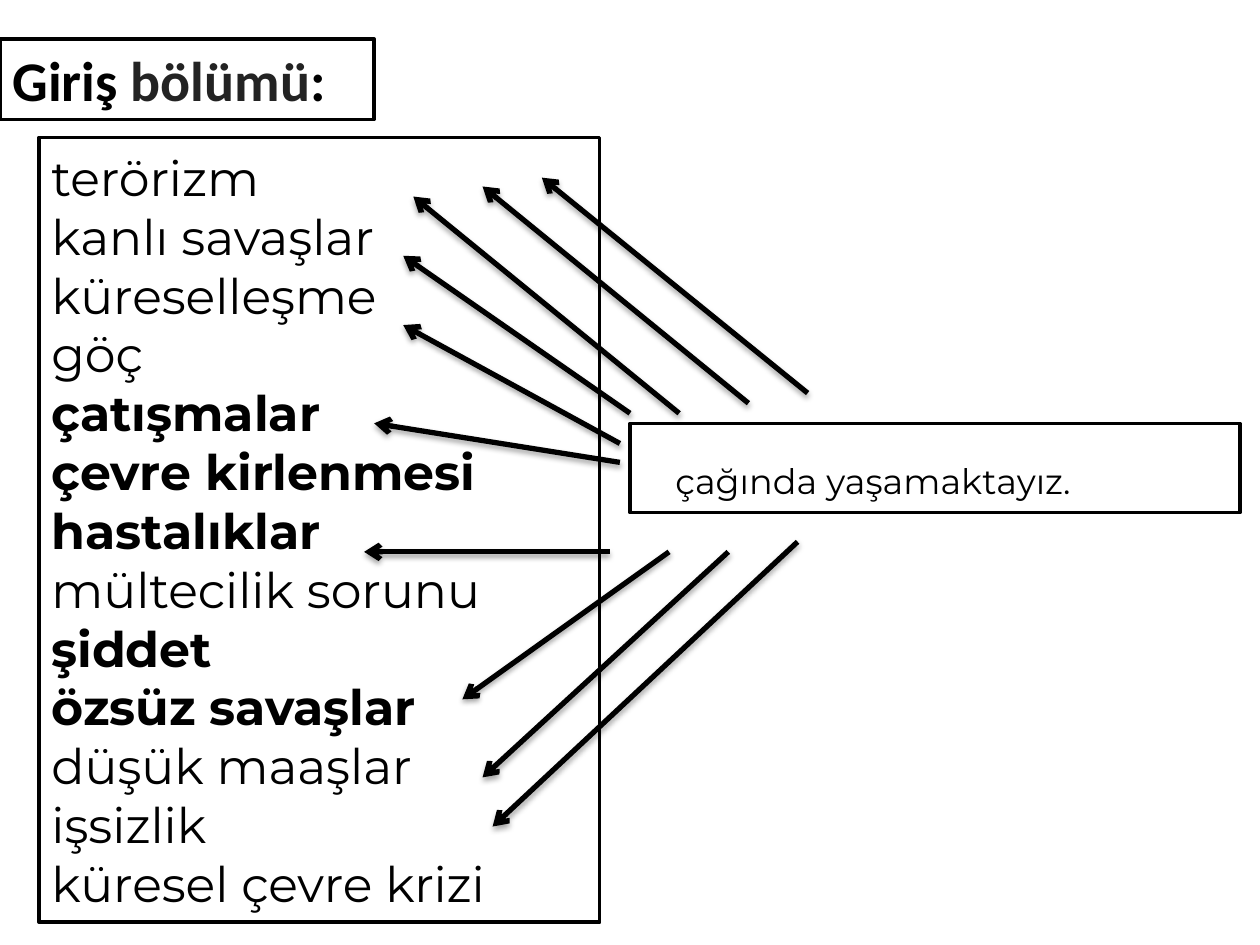
import pptx
import pptx.util
import pptx.dml.color
import pptx.enum.shapes
import pptx.enum.text
import pptx.oxml
import pptx.oxml.ns

W, H = 10, 7.5
COLORS = {"ink": "000000", "grey": "232323", "paper": "FFFFFF"}

# Content: (text, font, size, bold, colour) for each run
TITLE = [[("Giriş ", "Calibri", 32, True, "ink"),
          ("bölümü", "Calibri", 32, True, "grey"),
          (":", "Calibri", 32, True, "ink")]]
PROBLEMS = ["terörizm", "kanlı savaşlar", "küreselleşme", "göç", "çatışmalar",
            "çevre kirlenmesi", "hastalıklar", "mültecilik sorunu", "şiddet",
            "özsüz savaşlar", "düşük maaşlar", "işsizlik", "küresel çevre krizi"]
STRESSED = {"çatışmalar", "çevre kirlenmesi", "hastalıklar", "şiddet", "özsüz savaşlar"}
PROBLEM_LINES = [[(t, "Montserrat", 28, t in STRESSED, "ink")] for t in PROBLEMS]
ENDING = [[("çağında yaşamaktayız.", "Montserrat", 20, False, "ink")]]

# Arrows from the sentence ending to the problems, in inches
ARROWS = [
    ((5.39, 3.28), (3.28, 1.56)), ((6.33, 4.3), (3.91, 6.56)),
    ((5.31, 4.38), (3.67, 5.55)), ((5.94, 3.2), (3.83, 1.48)),
    ((4.84, 4.38), (2.89, 4.38)), ((6.41, 3.12), (4.3, 1.41)),
    ((4.92, 3.67), (2.97, 3.36)), ((5, 3.28), (3.2, 2.03)),
    ((5.78, 4.38), (3.83, 6.17)), ((4.92, 3.52), (3.2, 2.58)),
]
SHADOW = (
    '<a:effectLst %s><a:outerShdw blurRad="40000" dist="23000" dir="5400000" rotWithShape="0">'
    '<a:srgbClr val="%s"><a:alpha val="35000"/></a:srgbClr></a:outerShdw></a:effectLst>'
    % (pptx.oxml.ns.nsdecls("a"), COLORS["ink"]))
ARROWHEAD = '<a:tailEnd %s type="arrow"/>' % pptx.oxml.ns.nsdecls("a")

inch = pptx.util.Inches
ALIGN = pptx.enum.text.PP_ALIGN


def rgb(name):
    return pptx.dml.color.RGBColor.from_string(COLORS[name])


def add_box(s, at, lines, align=ALIGN.LEFT):
    sp = s.shapes.add_shape(pptx.enum.shapes.MSO_SHAPE.RECTANGLE, *map(inch, at))
    sp.shadow.inherit = False
    sp.fill.solid()
    sp.fill.fore_color.rgb = rgb("paper")
    sp.line.color.rgb = rgb("ink")
    sp.line.width = pptx.util.Pt(2)
    tf = sp.text_frame
    tf.word_wrap = True
    tf.vertical_anchor = pptx.enum.text.MSO_ANCHOR.MIDDLE
    for i, line in enumerate(lines):
        p = tf.add_paragraph() if i else tf.paragraphs[0]
        p.alignment = align
        for text, font, size, bold, color in line:
            r = p.add_run()
            r.text = text
            r.font.name, r.font.size, r.font.bold = font, pptx.util.Pt(size), bold
            r.font.color.rgb = rgb(color)
    return sp


def add_arrow(s, start, end):
    cn = s.shapes.add_connector(pptx.enum.shapes.MSO_CONNECTOR.STRAIGHT,
                                *map(inch, start + end))
    cn.line.color.rgb = rgb("ink")
    cn.line.width = pptx.util.Pt(3)
    cn.line._get_or_add_ln().append(pptx.oxml.parse_xml(ARROWHEAD))
    cn._element.spPr.append(pptx.oxml.parse_xml(SHADOW))


prs = pptx.Presentation()
prs.slide_width, prs.slide_height = inch(W), inch(H)
s = prs.slides.add_slide(prs.slide_layouts[6])

# Boxes
add_box(s, (0, 0.31, 2.97, 0.64), TITLE, ALIGN.JUSTIFY)
add_box(s, (0.31, 1.09, 4.45, 6.23), PROBLEM_LINES)
ending = add_box(s, (W / 2, 3.36, 4.84, 0.71), ENDING)
ending.text_frame.margin_left = inch(0.36)
ending.text_frame.margin_top = inch(0.25)

# Arrows
for start, end in ARROWS:
    add_arrow(s, start, end)

prs.save("out.pptx")
